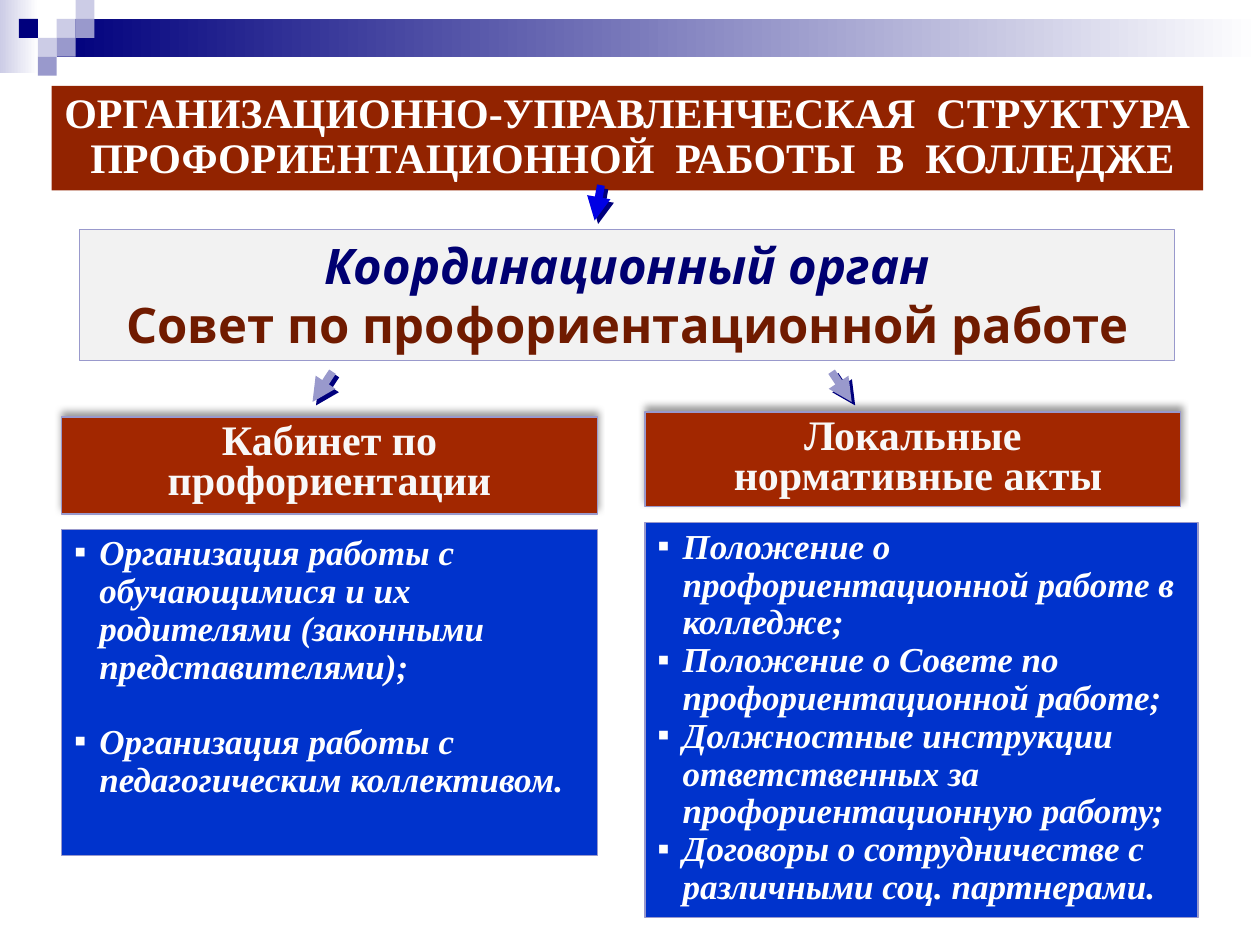
from lxml import etree
from pptx import Presentation
from pptx import util as u
from pptx.dml.color import RGBColor
from pptx.enum import shapes, text
from pptx.oxml import ns

Pt = u.Pt
SERIF, SANS = "Times New Roman", "Noto Sans"
LILAC, NAVY, PALE, WHITE = "9999CC", "00007D", "CCCCE6", "FFFFFF"
RUST, BLUE = "A22700", "0033CC"

# Content: boxes are (left, top, width, height)
TITLE = "ОРГАНИЗАЦИОННО-УПРАВЛЕНЧЕСКАЯ  СТРУКТУРА  ПРОФОРИЕНТАЦИОННОЙ  РАБОТЫ  В  КОЛЛЕДЖЕ"
TITLE_BOX = (29.5, 49, 658, 59.8)
COUNCIL_BOX = (45.4, 131, 625.7, 74.9)
COUNCIL = [("Координационный орган", "000072", True),
           ("Совет по профориентационной работе", "701B00", False)]
BRANCHES = [
    {"head": ["Кабинет по профориентации"],
     "head_box": (35.3, 238.3, 306, 55.4),
     "items": ["Организация работы с обучающимися и их родителями (законными представителями);",
               "Организация работы с педагогическим коллективом."],
     "list_box": (35.3, 302.4, 306, 186.5), "gap": 21.6},
    {"head": ["Локальные", " нормативные акты"],
     "head_box": (368.6, 235.4, 306, 54),
     "items": ["Положение о профориентационной работе в колледже;",
               "Положение о Совете по профориентационной работе;",
               "Должностные инструкции ответственных за профориентационную работу;",
               "Договоры о сотрудничестве с различными соц. партнерами."],
     "list_box": (368.6, 298.8, 316, 225.4), "gap": 0},
]
# Arrows: start x, start y, end x, end y, colour
ARROWS = [(190, 212.4, 178.6, 229.7, LILAC),
          (475.2, 212.4, 486.7, 229.7, LILAC),
          (343.4, 105.8, 339.8, 126, "0000E4")]
# Corner mosaic: column, row, colour
TILE = 10.8
TILES = [(3, 1, PALE), (4, 0, PALE), (4, 1, LILAC), (2, 2, PALE),
         (1, 1, NAVY), (3, 2, LILAC), (2, 3, LILAC)]


def colour(value):
    return RGBColor.from_string(value)


def add_xml(parent, tag, **attributes):
    child = etree.SubElement(parent, ns.qn(tag))
    for name, value in attributes.items():
        child.set(name, str(value))
    return child


def add_shadow(holder, value, alpha, blur, distance, angle):
    shadow = add_xml(holder, "a:outerShdw", blurRad=Pt(blur), dist=Pt(distance),
                     dir=angle * 60000, algn="ctr", rotWithShape=0)
    add_xml(add_xml(shadow, "a:srgbClr", val=value), "a:alpha", val=alpha * 1000)


def add_box(page, place, fill, line=None, fade_to=None):
    box = page.shapes.add_shape(shapes.MSO_SHAPE.RECTANGLE, *map(Pt, place))
    if fade_to:
        box.fill.gradient()
        box.fill.gradient_angle = 0
        for stop, value, position in zip(box.fill.gradient_stops, (fill, fade_to), (0, 1)):
            stop.color.rgb = colour(value)
            stop.position = position
    else:
        box.fill.solid()
        box.fill.fore_color.rgb = colour(fill)
    if line:
        box.line.color.rgb = colour(line)
        box.line.width = Pt(0.75)
    else:
        box.line.fill.background()
    box.shadow.inherit = False
    return box


def write(box, lines, size, font, spacing=1.0, centred=True, gap=0):
    """Each line is (wording, colour, italic)."""
    frame = box.text_frame
    frame.word_wrap = True
    frame.auto_size = text.MSO_AUTO_SIZE.NONE
    frame.vertical_anchor = text.MSO_ANCHOR.TOP
    for index, (wording, value, italic) in enumerate(lines):
        para = frame.add_paragraph() if index else frame.paragraphs[0]
        para.alignment = text.PP_ALIGN.CENTER if centred else text.PP_ALIGN.LEFT
        para.line_spacing = spacing
        para.space_before = Pt(gap if index else 0)
        span = para.add_run()
        span.text = wording
        span.font.name, span.font.size = font, Pt(size)
        span.font.bold, span.font.italic = True, italic
        span.font.color.rgb = colour(value)


def add_bullets(box, indent=14.4):
    for para in box.text_frame.paragraphs:
        props = para._p.get_or_add_pPr()
        props.set("marL", str(Pt(indent)))
        props.set("indent", str(-Pt(indent)))
        add_xml(props, "a:buFont", typeface=SERIF)
        add_xml(props, "a:buChar", char="▪")


def add_arrow(page, x1, y1, x2, y2, value):
    arrow = page.shapes.add_connector(shapes.MSO_CONNECTOR.STRAIGHT,
                                      Pt(x1), Pt(y1), Pt(x2), Pt(y2))
    arrow.line.color.rgb = colour(value)
    arrow.line.width = Pt(4.5)
    add_xml(arrow.line._get_or_add_ln(), "a:tailEnd", type="triangle")
    add_shadow(add_xml(arrow._element.spPr, "a:effectLst"), NAVY, 100, 0, 2.8, 45)


def main():
    deck = Presentation()
    deck.slide_width, deck.slide_height = Pt(720), Pt(540)
    page = deck.slides.add_slide(deck.slide_layouts[5])

    # Top band and mosaic
    add_box(page, (0, 0, 22, 42), PALE, fade_to=WHITE)
    add_box(page, (3 * TILE, TILE, 720 - 3 * TILE, 21.6), NAVY, fade_to=WHITE)
    for column, row, value in TILES:
        add_box(page, (column * TILE, row * TILE, TILE, TILE), value)

    # Title
    title = page.shapes.title
    title.left, title.top, title.width, title.height = map(Pt, TITLE_BOX)
    title.fill.solid()
    title.fill.fore_color.rgb = colour("922300")
    write(title, [(TITLE, WHITE, False)], 24, SERIF, 0.9)

    # Coordinating council
    write(add_box(page, COUNCIL_BOX, "F2F2F2", LILAC), COUNCIL, 28, SANS)

    # Two branches: heading and list
    for branch in BRANCHES:
        head = add_box(page, branch["head_box"], RUST, LILAC)
        add_shadow(head._element.spPr.find(ns.qn("a:effectLst")), "000000", 40, 4, 3, 270)
        write(head, [(line, "F8F8F8", False) for line in branch["head"]], 24, SERIF, 0.8)
        listing = add_box(page, branch["list_box"], BLUE, LILAC)
        write(listing, [(item, WHITE, True) for item in branch["items"]],
              20, SERIF, 0.9, centred=False, gap=branch["gap"])
        add_bullets(listing)

    # Arrows between levels
    for arrow in ARROWS:
        add_arrow(page, *arrow)

    deck.save("out.pptx")


if __name__ == "__main__":
    main()
